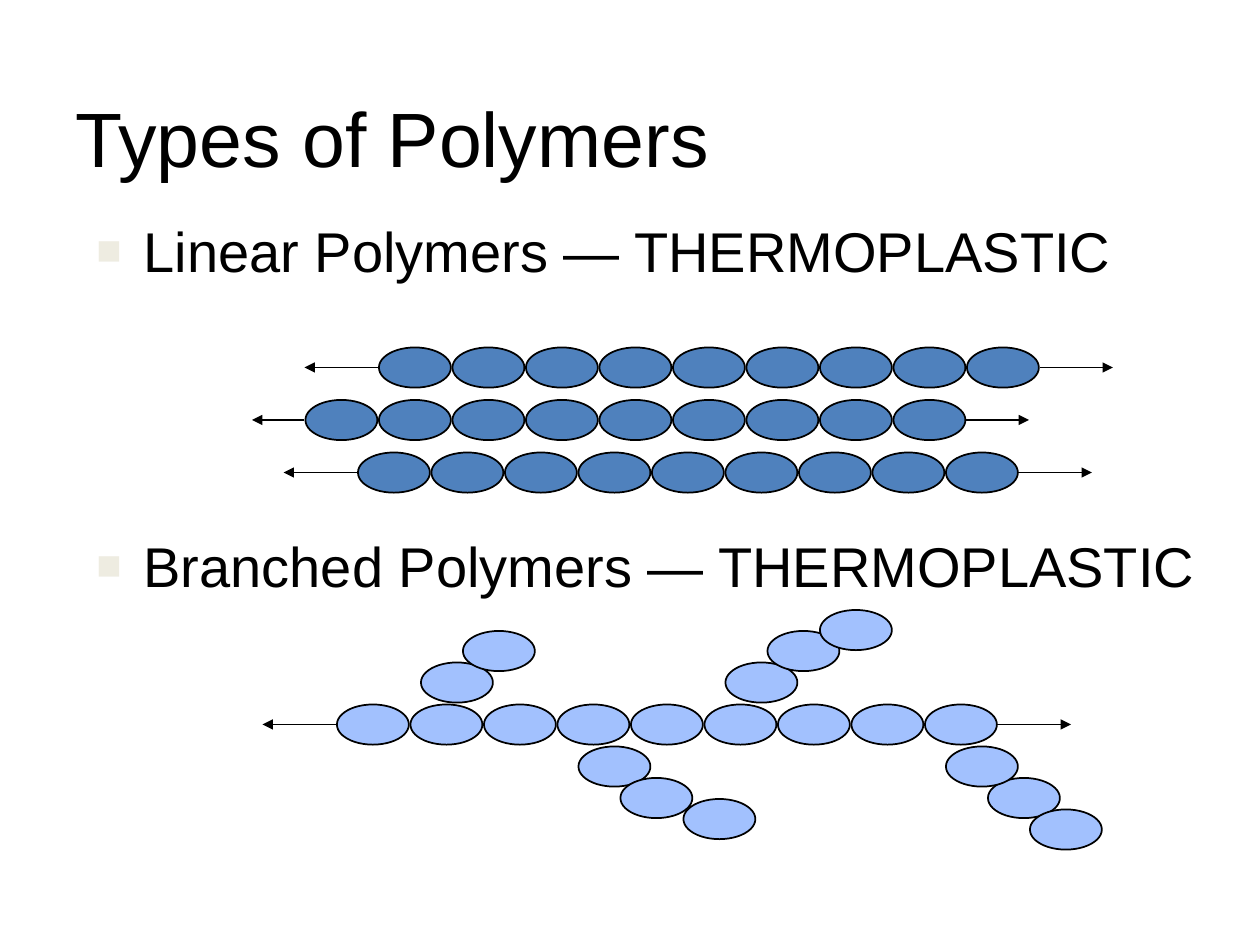
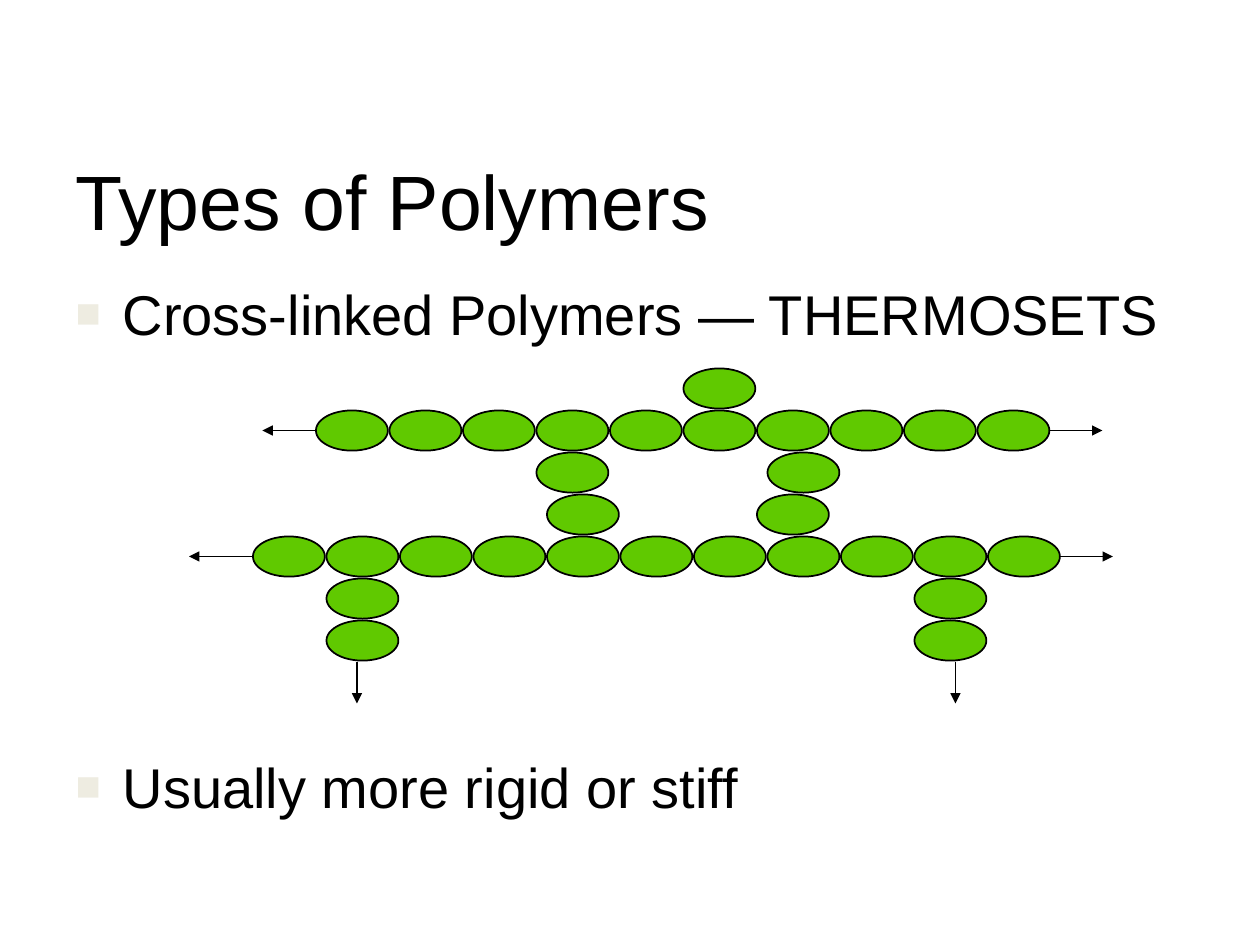
from dataclasses import dataclass

from lxml.etree import SubElement
from pptx import Presentation
from pptx.dml.color import RGBColor as RGB
from pptx.enum.shapes import MSO_CONNECTOR as CONN, MSO_SHAPE as SHAPE
from pptx.enum.text import MSO_ANCHOR as ANCHOR, MSO_AUTO_SIZE as AUTOSIZE, PP_ALIGN as ALIGN
from pptx.oxml.ns import qn
from pptx.util import Cm, Length, Pt

COLORS = {
    "text": "000000",
    "bullet": "EEECE1",
    "linear": "4F81BD",
    "branched": "A2C1FE",
    "crosslinked": "60C900",
}
FONT = "Arial"
BEAD_PITCH = 7
BEAD_MIDDLE = 2
BEAD_INSET = Cm(0.02)
BEAD_WIDTH, BEAD_HEIGHT = Cm(1.45), Cm(0.81)


@dataclass(frozen=True)
class Box:
    left: float
    top: float
    width: float
    height: float


@dataclass(frozen=True)
class Bullet:
    text: str
    space_before: float = 3


@dataclass(frozen=True)
class Chain:
    col: int
    row: int
    beads: int
    left_arrow: int
    right_arrow: int


@dataclass(frozen=True)
class Arrow:
    col: int
    row: int
    end_col: int
    end_row: int


@dataclass(frozen=True)
class Polymer:
    color: str
    chains: tuple[Chain, ...]
    side_beads: tuple[tuple[int, int], ...] = ()
    arrows: tuple[Arrow, ...] = ()


@dataclass(frozen=True)
class Page:
    title_box: Box
    body_box: Box
    bullets: tuple[Bullet, ...]
    polymers: tuple[Polymer, ...]


PAGES = (
    Page(
        Box(1.27, 1.06, 22.86, 2.75),
        Box(1.69, 4.23, 23.07, 11.43),
        (
            Bullet("Linear Polymers — THERMOPLASTIC"),
            Bullet("Branched Polymers — THERMOPLASTIC", 142),
        ),
        (
            Polymer("linear", (
                Chain(36, 33, 9, 7, 7),
                Chain(29, 38, 9, 5, 6),
                Chain(34, 43, 9, 7, 7),
            )),
            Polymer("branched", (Chain(32, 67, 9, 7, 7),), (
                (40, 63), (44, 60),
                (55, 71), (59, 74), (65, 76),
                (69, 63), (73, 60), (78, 58),
                (94, 74), (90, 71), (98, 77),
            )),
        ),
    ),
    Page(
        Box(1.27, 1.27, 22.86, 3.81),
        Box(1.27, 5.5, 22.86, 10.8),
        (
            Bullet("Cross-linked Polymers — THERMOSETS"),
            Bullet("Usually more rigid or stiff", 232),
        ),
        (
            Polymer(
                "crosslinked",
                (Chain(30, 39, 10, 5, 5), Chain(24, 51, 11, 6, 5)),
                (
                    (65, 35),
                    (51, 43), (52, 47), (73, 43), (72, 47),
                    (31, 55), (31, 59), (87, 55), (87, 59),
                ),
                (Arrow(34, 63, 34, 67), Arrow(91, 63, 91, 67)),
            ),
        ),
    ),
)


def grid(steps: int) -> Length:
    return Cm(2.54 * steps / 12)


def place(sp, box: Box, *, anchor: ANCHOR):
    sp.left, sp.top = Cm(box.left), Cm(box.top)
    sp.width, sp.height = Cm(box.width), Cm(box.height)
    tf = sp.text_frame
    tf.word_wrap = True
    tf.auto_size = AUTOSIZE.NONE
    tf.vertical_anchor = anchor
    return tf


def write(p, text: str, *, size: float, space_before: float = 0) -> None:
    p.alignment = ALIGN.LEFT
    p.space_before = Pt(space_before)
    r = p.add_run()
    r.text = text
    r.font.name = FONT
    r.font.size = Pt(size)
    r.font.color.rgb = RGB.from_string(COLORS["text"])


def add_bullet_mark(p) -> None:
    pPr = p._p.get_or_add_pPr()
    pPr.set("marL", str(Cm(0.95)))
    pPr.set("indent", str(-Cm(0.95)))
    color = SubElement(pPr, qn("a:buClr"))
    SubElement(color, qn("a:srgbClr"), val=COLORS["bullet"])
    SubElement(pPr, qn("a:buSzPct"), val="75000")
    SubElement(pPr, qn("a:buFont"), typeface=FONT)
    SubElement(pPr, qn("a:buChar"), char="■")


def add_bead(slide, col: int, row: int, color: str) -> None:
    sp = slide.shapes.add_shape(
        SHAPE.OVAL, grid(col) + BEAD_INSET, grid(row) + BEAD_INSET, BEAD_WIDTH, BEAD_HEIGHT)
    sp.shadow.inherit = False
    sp.fill.solid()
    sp.fill.fore_color.rgb = RGB.from_string(COLORS[color])
    sp.line.color.rgb = RGB.from_string(COLORS["text"])
    sp.line.width = Pt(1)


def add_arrow(slide, arrow: Arrow) -> None:
    line = slide.shapes.add_connector(
        CONN.STRAIGHT, grid(arrow.col), grid(arrow.row), grid(arrow.end_col), grid(arrow.end_row))
    line.line.color.rgb = RGB.from_string(COLORS["text"])
    line.line.width = Pt(1)
    SubElement(line.line._get_or_add_ln(), qn("a:tailEnd"), type="triangle")
    SubElement(line._element.spPr, qn("a:effectLst"))


def add_chain(slide, chain: Chain, color: str) -> None:
    for i in range(chain.beads):
        add_bead(slide, chain.col + i * BEAD_PITCH, chain.row, color)
    middle = chain.row + BEAD_MIDDLE
    end = chain.col + chain.beads * BEAD_PITCH
    add_arrow(slide, Arrow(chain.col, middle, chain.col - chain.left_arrow, middle))
    add_arrow(slide, Arrow(end, middle, end + chain.right_arrow, middle))


def add_polymer(slide, polymer: Polymer) -> None:
    for chain in polymer.chains:
        add_chain(slide, chain, polymer.color)
    for col, row in polymer.side_beads:
        add_bead(slide, col, row, polymer.color)
    for arrow in polymer.arrows:
        add_arrow(slide, arrow)


def add_page(prs, page: Page) -> None:
    slide = prs.slides.add_slide(prs.slide_layouts[1])
    tf = place(slide.shapes.title, page.title_box, anchor=ANCHOR.BOTTOM)
    write(tf.paragraphs[0], "Types of Polymers", size=44)
    tf = place(slide.placeholders[1], page.body_box, anchor=ANCHOR.TOP)
    for i, bullet in enumerate(page.bullets):
        p = tf.add_paragraph() if i else tf.paragraphs[0]
        write(p, bullet.text, size=32, space_before=bullet.space_before)
        add_bullet_mark(p)
    for polymer in page.polymers:
        add_polymer(slide, polymer)


def main() -> None:
    prs = Presentation()
    prs.slide_width, prs.slide_height = Cm(25.4), Cm(19.05)
    for page in PAGES:
        add_page(prs, page)
    prs.save("out.pptx")


if __name__ == "__main__":
    main()
